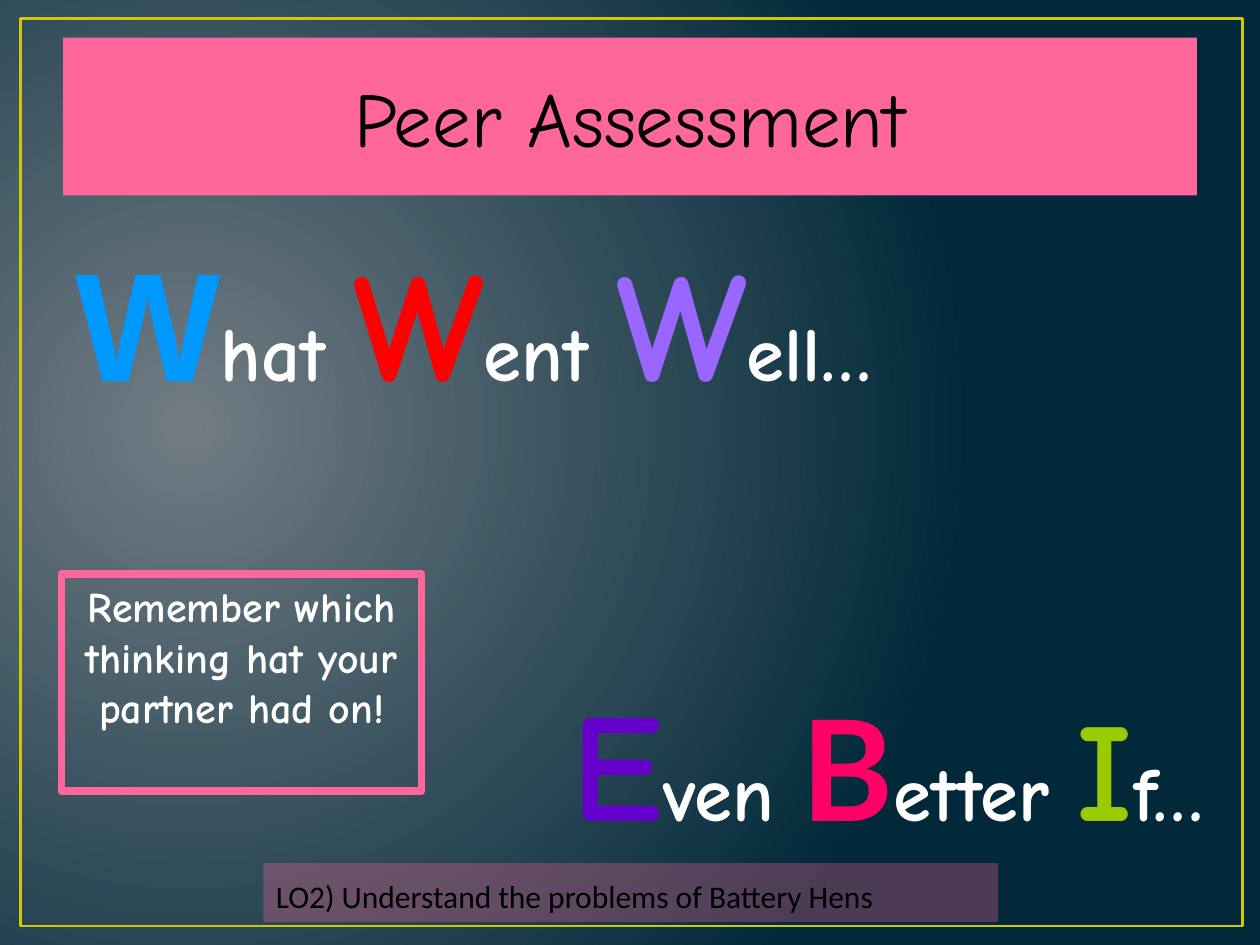
from lxml import etree
from pptx import Presentation
from pptx import util as u
from pptx.dml.color import RGBColor
from pptx.enum import shapes, text
from pptx.oxml import ns

COLOURS = {
    "glow": "717C84", "night": "01293A", "gold": "CFC60D", "pink": "FF6699",
    "black": "000000", "white": "FFFFFF", "blue": "0099FF", "red": "FF0000",
    "lilac": "9966FF", "purple": "6600CC", "magenta": "FF0066", "lime": "99CC00",
}


def colour(name):
    return RGBColor.from_string(COLOURS[name])


def write(paragraph, pieces):
    """Add runs given as (text, size, font, colour, bold)."""
    for words, size, font, shade, bold in pieces:
        run = paragraph.add_run()
        run.text = words
        run.font.size = u.Pt(size)
        run.font.name = font
        run.font.bold = bold
        run.font.color.rgb = colour(shade)


prs = Presentation()
prs.slide_width, prs.slide_height = u.Cm(25.4), u.Cm(19.05)
slide = prs.slides.add_slide(prs.slide_layouts[1])

# Background: radial glow from the left
backdrop = slide.background.fill
backdrop.gradient()
for stop, shade in zip(backdrop.gradient_stops, ("glow", "night")):
    stop.color.rgb = colour(shade)
gradient = slide.element.find(".//" + ns.qn("a:gradFill"))
gradient.remove(gradient.find(ns.qn("a:lin")))
glow_path = etree.SubElement(gradient, ns.qn("a:path"))
glow_path.set("path", "circle")
centre = etree.SubElement(glow_path, ns.qn("a:fillToRect"))
for side, percent in zip("ltrb", (15, 50, 85, 60)):
    centre.set(side, str(percent * 1000))

# Gold frame, behind everything
frame = slide.shapes.add_shape(
    shapes.MSO_SHAPE.RECTANGLE, u.Cm(0.41), u.Cm(0.38), u.Cm(24.64), u.Cm(18.29))
frame.shadow.inherit = False
frame.fill.background()
frame.line.color.rgb = colour("gold")
frame.line.width = u.Pt(1.5)
slide.shapes.element.insert(2, frame.element)

# Title banner
title = slide.shapes.title
title.left, title.top, title.width, title.height = (
    u.Cm(1.27), u.Cm(0.76), u.Cm(22.86), u.Cm(3.18))
title.fill.solid()
title.fill.fore_color.rgb = colour("pink")
title.text_frame.vertical_anchor = text.MSO_ANCHOR.MIDDLE
title.text_frame.auto_size = text.MSO_AUTO_SIZE.NONE
heading = title.text_frame.paragraphs[0]
heading.alignment = text.PP_ALIGN.CENTER
write(heading, [("Peer Assessment", 44, "Comic Neue", "black", False)])

# What Went Well
went_well = slide.placeholders[1]
went_well.left, went_well.top, went_well.width, went_well.height = (
    u.Cm(1.27), u.Cm(4.45), u.Cm(22.86), u.Cm(4.67))
went_well.text_frame.auto_size = text.MSO_AUTO_SIZE.NONE
praise = went_well.text_frame.paragraphs[0]
praise.space_before = u.Pt(11)
write(praise, [
    ("W", 88, "Arial", "blue", True), ("hat ", 44, "Comic Neue", "white", True),
    ("W", 88, "Comic Neue", "red", True), ("ent ", 44, "Comic Neue", "white", True),
    ("W", 88, "Comic Neue", "lilac", True), ("ell…", 44, "Comic Neue", "white", True),
])
praise_format = praise.runs[0].font._element.getparent().getparent().get_or_add_pPr()
praise_format.set("marL", "0")
praise_format.set("indent", "0")
etree.SubElement(praise_format, ns.qn("a:buNone"))

# Even Better If
better_if = slide.shapes.add_textbox(u.Cm(11.28), u.Cm(13.34), u.Cm(13.49), u.Cm(4.04))
better_if.text_frame.word_wrap = False
better_if.text_frame.auto_size = text.MSO_AUTO_SIZE.SHAPE_TO_FIT_TEXT
write(better_if.text_frame.paragraphs[0], [
    ("E", 88, "Comic Neue", "purple", True), ("ven ", 44, "Comic Neue", "white", True),
    ("B", 80, "Lato", "magenta", True), ("etter ", 44, "Comic Neue", "white", True),
    ("I", 80, "Comic Neue", "lime", True), ("f…", 44, "Comic Neue", "white", True),
])

# Thinking hat reminder
reminder = slide.shapes.add_textbox(u.Cm(1.24), u.Cm(11.58), u.Cm(7.26), u.Cm(4.37))
reminder.line.color.rgb = colour("pink")
reminder.line.width = u.Pt(4.5)
reminder.text_frame.word_wrap = True
reminder.text_frame.auto_size = text.MSO_AUTO_SIZE.SHAPE_TO_FIT_TEXT
hint = reminder.text_frame.paragraphs[0]
hint.alignment = text.PP_ALIGN.CENTER
write(hint, [("Remember which thinking hat your partner had on!",
              24, "Comic Neue", "white", True)])

# Learning objective on a see-through strip
objective = slide.shapes.add_textbox(u.Cm(5.31), u.Cm(17.4), u.Cm(14.81), u.Cm(1.19))
objective.fill.solid()
objective.fill.fore_color.rgb = colour("pink")
tint = objective.element.spPr.find(".//" + ns.qn("a:srgbClr"))
etree.SubElement(tint, ns.qn("a:alpha")).set("val", "30000")
objective.text_frame.word_wrap = True
objective.text_frame.auto_size = text.MSO_AUTO_SIZE.SHAPE_TO_FIT_TEXT
goal = objective.text_frame.paragraphs[0]
goal.line_spacing = 1.2
goal.space_before = u.Pt(4.5)
write(goal, [("LO2) Understand the problems of Battery Hens",
              18, "Calibri", "black", False)])

prs.save("out.pptx")
